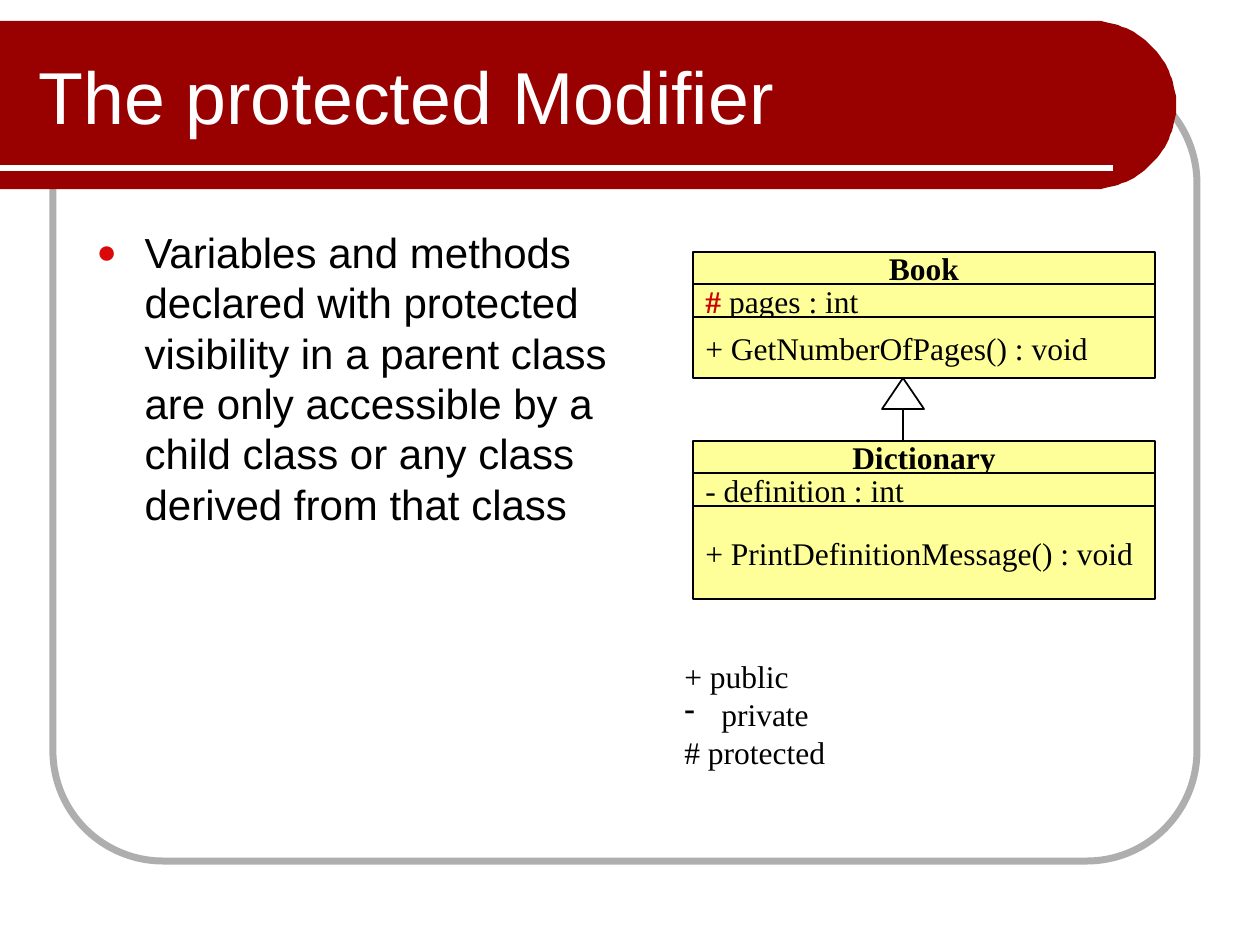
import math

from lxml import etree
from pptx import Presentation
from pptx import util as u
from pptx.dml.color import RGBColor
from pptx.enum import shapes, text
from pptx.oxml.ns import qn

PX = 914400 / 126
WHITE = RGBColor(0xFF, 0xFF, 0xFF)
BLACK = RGBColor(0x00, 0x00, 0x00)
GREY = RGBColor(0xAE, 0xAE, 0xAE)
DARK_RED = RGBColor(0x99, 0x00, 0x00)
RED = RGBColor(0xCC, 0x00, 0x00)
YELLOW = RGBColor(0xFF, 0xFF, 0x99)
BULLET_RED = "DA0808"
SANS = "Arial"
SERIF = "Times New Roman"
CLASS_LEFT, CLASS_WIDTH = 693, 462


def px(value):
    return u.Emu(round(value * PX))


def box(left, top, width, height):
    return [px(value) for value in (left, top, width, height)]


def format_runs(paragraph, font, size, color, bold=False):
    for run in paragraph.runs:
        run.font.name = font
        run.font.size = u.Pt(size)
        run.font.color.rgb = color
        run.font.bold = bold


def add_bullet(paragraph, character, indent, color=None, percent=100):
    properties = paragraph._p.get_or_add_pPr()
    properties.set("marL", str(px(indent)))
    properties.set("indent", str(-px(indent)))
    if color:
        bullet_color = etree.SubElement(properties, qn("a:buClr"))
        etree.SubElement(bullet_color, qn("a:srgbClr"), val=color)
    etree.SubElement(properties, qn("a:buSzPct"), val=str(percent * 1000))
    etree.SubElement(properties, qn("a:buChar"), char=character)


def paint(shape, fill, line=None, width=1):
    shape.shadow.inherit = False
    if fill is None:
        shape.fill.background()
    else:
        shape.fill.solid()
        shape.fill.fore_color.rgb = fill
    if line is None:
        shape.line.fill.background()
    else:
        shape.line.color.rgb = line
        shape.line.width = u.Pt(width)


def add_preset(slide, kind, bounds, fill, line, width=1):
    shape = slide.shapes.add_shape(kind, *box(*bounds))
    paint(shape, fill, line, width)
    return shape


def add_line(slide, start, end, color, width):
    line = slide.shapes.add_connector(
        shapes.MSO_CONNECTOR.STRAIGHT, *[px(value) for value in start + end])
    line.line.color.rgb = color
    line.line.width = u.Pt(width)
    etree.SubElement(line._element.spPr, qn("a:effectLst"))
    return line


def add_frame(slide):
    frame = add_preset(slide, shapes.MSO_SHAPE.ROUNDED_RECTANGLE,
                       (53, 73, 1144, 788), None, GREY, 4)
    frame.adjustments[0] = 0.14


def add_banner(slide):
    top, bottom, arc_center = 21, 189, 1092
    radius = (bottom - top) / 2
    angles = [math.radians(degrees) for degrees in range(-90, 91, 3)]
    arc = [(arc_center + radius * math.cos(angle),
            top + radius + radius * math.sin(angle)) for angle in angles]
    builder = slide.shapes.build_freeform(0, top, scale=PX)
    builder.add_line_segments(arc + [(0, bottom)], close=True)
    paint(builder.convert_to_shape(), DARK_RED)
    add_line(slide, (0, 168), (1113, 168), WHITE, 3)


def fill_placeholder(slide, placeholder, bounds, content):
    slide.shapes._spTree.append(placeholder._element)
    placeholder.left, placeholder.top, placeholder.width, placeholder.height = box(*bounds)
    placeholder.text_frame.text = content
    paragraph = placeholder.text_frame.paragraphs[0]
    paragraph.alignment = text.PP_ALIGN.LEFT
    return paragraph


def add_title(slide):
    paragraph = fill_placeholder(slide, slide.shapes.title, (26, 32, 982, 126),
                                 "The protected Modifier")
    slide.shapes.title.text_frame.vertical_anchor = text.MSO_ANCHOR.MIDDLE
    format_runs(paragraph, SANS, 42, WHITE)


def add_body(slide):
    paragraph = fill_placeholder(
        slide, slide.placeholders[1], (84, 220, 536, 609),
        "Variables and methods declared with protected visibility in a parent class "
        "are only accessible by a child class or any class derived from that class")
    paragraph.space_before = u.Pt(0)
    paragraph.line_spacing = u.Pt(28.8)
    add_bullet(paragraph, "●", 48, BULLET_RED, 80)
    format_runs(paragraph, SANS, 24, BLACK)


def add_class_row(slide, top, height, content):
    row = add_preset(slide, shapes.MSO_SHAPE.RECTANGLE,
                     (CLASS_LEFT, top, CLASS_WIDTH, height), YELLOW, BLACK)
    row.text_frame.word_wrap = False
    row.text_frame.vertical_anchor = text.MSO_ANCHOR.MIDDLE
    row.text_frame.text = content
    paragraph = row.text_frame.paragraphs[0]
    paragraph.alignment = text.PP_ALIGN.LEFT
    format_runs(paragraph, SERIF, 18, BLACK)
    return paragraph


def add_class(slide, top, name, attribute, method, method_height):
    heading = add_class_row(slide, top, 32, name)
    heading.alignment = text.PP_ALIGN.CENTER
    heading.runs[0].font.bold = True
    field = add_class_row(slide, top + 32, 33, attribute)
    add_class_row(slide, top + 65, method_height, method)
    return field


def mark_protected(paragraph):
    rest = paragraph.text[1:]
    paragraph.runs[0].text = "#"
    paragraph.add_run().text = rest
    format_runs(paragraph, SERIF, 18, BLACK)
    symbol = paragraph.runs[0].font
    symbol.bold = True
    symbol.color.rgb = RED


def add_inheritance(slide):
    line = add_line(slide, (903, 441), (903, 378), BLACK, 1)
    etree.SubElement(line.line._get_or_add_ln(), qn("a:tailEnd"), type="triangle")
    add_preset(slide, shapes.MSO_SHAPE.ISOSCELES_TRIANGLE,
               (882, 378, 42, 31), WHITE, BLACK)


def add_legend(slide):
    legend = slide.shapes.add_textbox(*box(672, 651, 174, 126))
    legend.text_frame.word_wrap = False
    legend.text_frame.auto_size = text.MSO_AUTO_SIZE.SHAPE_TO_FIT_TEXT
    legend.text_frame.text = "+ public\nprivate\n# protected"
    for paragraph in legend.text_frame.paragraphs:
        paragraph.line_spacing = u.Pt(21.6)
        format_runs(paragraph, SERIF, 18, BLACK)
    add_bullet(legend.text_frame.paragraphs[1], "-", 37)


def main():
    presentation = Presentation()
    presentation.slide_width = px(1260)
    presentation.slide_height = px(945)
    slide = presentation.slides.add_slide(presentation.slide_layouts[1])
    add_frame(slide)
    add_banner(slide)
    add_legend(slide)
    add_title(slide)
    add_body(slide)
    pages = add_class(slide, 252, "Book", "# pages : int",
                      "+ GetNumberOfPages() : void", 61)
    mark_protected(pages)
    add_class(slide, 441, "Dictionary", "- definition : int",
              "+ PrintDefinitionMessage() : void", 93)
    add_inheritance(slide)
    presentation.save("out.pptx")


if __name__ == "__main__":
    main()
